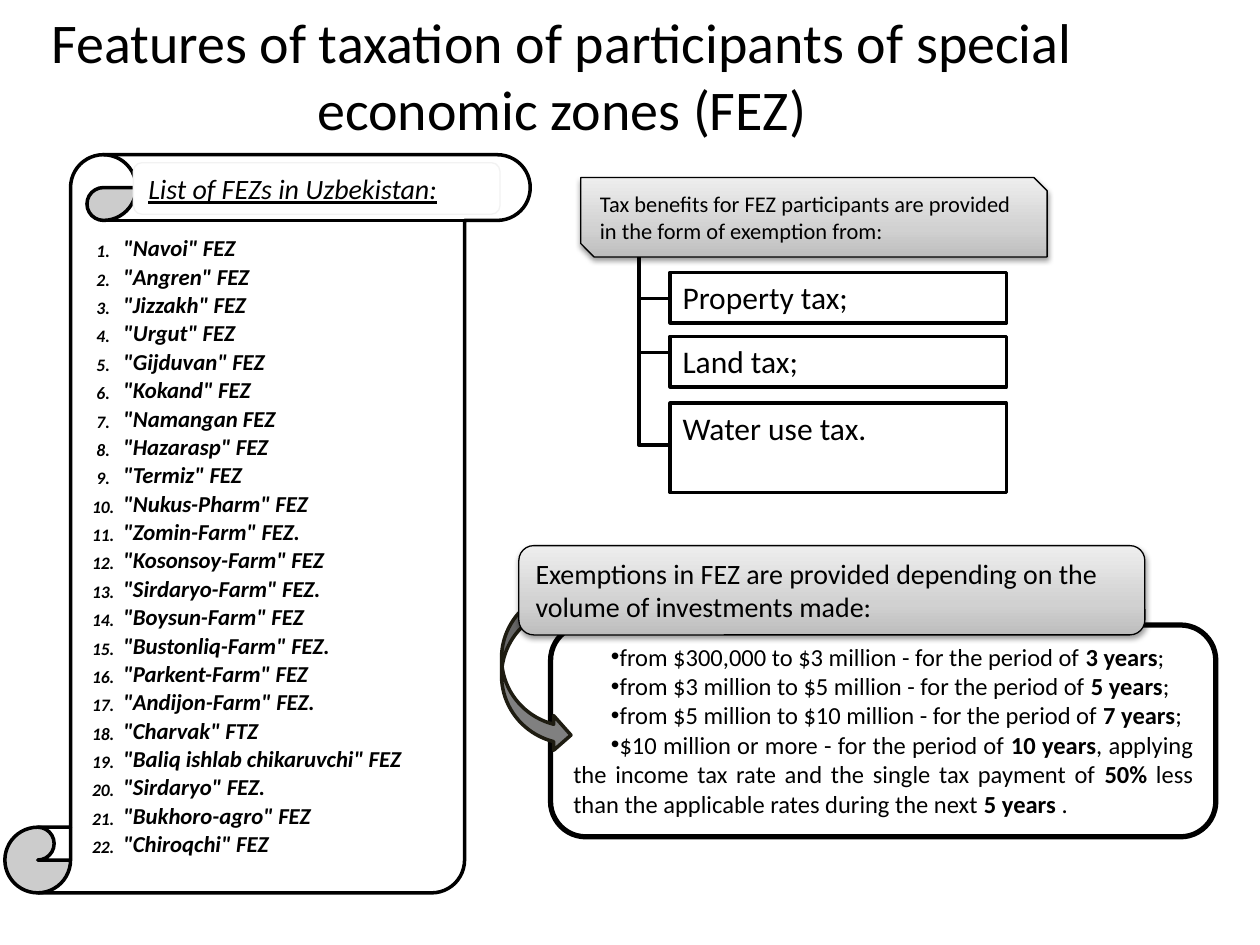
from lxml.etree import SubElement
from pptx import Presentation
from pptx.dml.color import RGBColor as Rgb
from pptx.enum.shapes import MSO_SHAPE as Form
from pptx.enum.text import MSO_ANCHOR as Anchor, PP_ALIGN as Align
from pptx.oxml.ns import qn
from pptx.util import Cm, Pt

FONT = "Calibri"
HUES = {"ink": "000000", "paper": "FFFFFF", "edge": "F2F2F2", "arrow": "808080",
        "rim": "1E1C11", "dark": "BDBDBD", "mid": "D1D1D1", "light": "EEEEEE"}
ZONES = ['"Navoi" FEZ', '"Angren" FEZ', '"Jizzakh" FEZ', '"Urgut" FEZ',
         '"Gijduvan" FEZ', '"Kokand" FEZ', '"Namangan FEZ', '"Hazarasp" FEZ',
         '"Termiz" FEZ', '"Nukus-Pharm" FEZ', '"Zomin-Farm" FEZ.',
         '"Kosonsoy-Farm" FEZ', '"Sirdaryo-Farm" FEZ.', '"Boysun-Farm" FEZ',
         '"Bustonliq-Farm" FEZ.', '"Parkent-Farm" FEZ', '"Andijon-Farm" FEZ.',
         '"Charvak" FTZ', '"Baliq ishlab chikaruvchi" FEZ', '"Sirdaryo" FEZ.',
         '"Bukhoro-agro" FEZ', '"Chiroqchi" FEZ']
TAXES = [("Property tax;", 1.91, 1.02, 2.44), ("Land tax;", 3.2, 1.02, 3.53),
         ("Water use tax.", 4.55, 1.8, 5.39)]
TERMS = [
    ["from $300,000 to $3 million - for the period of ", "3 years", ";"],
    ["from $3 million to $5 million - for the period of ", "5 years", ";"],
    ["from $5 million to $10 million - for the period of ", "7 years", ";"],
    ["$10 million or more - for the period of ", "10 years",
     ", applying the income tax rate and the single tax payment of ", "50%",
     " less than the applicable rates during the next ", "5 years", " ."],
]


def hue(name):
    return Rgb.from_string(HUES[name])


def style(frame, size, align=Align.LEFT, bold=False, slant=False, under=False):
    for para in frame.paragraphs:
        para.alignment = align
        for run in para.runs:
            font = run.font
            font.name, font.size = FONT, Pt(size)
            font.bold, font.italic, font.underline = bold, slant, under
            font.color.rgb = hue("ink")


def block(slide, form, x, y, w, h, line=2, fill="paper", edge="ink"):
    shape = slide.shapes.add_shape(form, Cm(x), Cm(y), Cm(w), Cm(h))
    shape.shadow.inherit = False
    shape.fill.solid()
    shape.fill.fore_color.rgb = hue(fill)
    shape.line.color.rgb = hue(edge)
    shape.line.width = Pt(line)
    shape.text_frame.word_wrap = True
    shape.text_frame.vertical_anchor = Anchor.TOP
    return shape


def banner(slide, form, x, y, w, h, text, size):
    shape = block(slide, form, x, y, w, h, 0.75)
    shape.fill.gradient()
    shape.fill.gradient_angle = 90
    props = shape.element.spPr
    stops = props.find(".//" + qn("a:gsLst"))
    stops.clear()
    for pos, name in ((0, "dark"), (35, "mid"), (100, "light")):
        stop = SubElement(stops, qn("a:gs"), pos=str(pos * 1000))
        SubElement(stop, qn("a:srgbClr"), val=HUES[name])
    shade = SubElement(props.find(qn("a:effectLst")), qn("a:outerShdw"),
                       blurRad="40000", dist="20000", dir="5400000", rotWithShape="0")
    tone = SubElement(shade, qn("a:srgbClr"), val=HUES["ink"])
    SubElement(tone, qn("a:alpha"), val="38000")
    shape.text_frame.text = text
    style(shape.text_frame, size)


def title(slide, x, y, w, h):
    frame = slide.shapes.add_textbox(Cm(x), Cm(y), Cm(w), Cm(h)).text_frame
    frame.word_wrap = True
    frame.vertical_anchor = Anchor.MIDDLE
    frame.text = "Features of taxation of participants of special economic zones (FEZ)"
    style(frame, 32, Align.CENTER)


def scroll(slide, x, y, w, h):
    block(slide, Form.VERTICAL_SCROLL, x, y, w, h)
    row = 0.56
    table = slide.shapes.add_table(len(ZONES), 2, Cm(x + 1.6), Cm(y + 1.6),
                                   Cm(7.21), Cm(row * len(ZONES))).table
    table.first_row = table.horz_banding = False
    table.columns[0].width, table.columns[1].width = Cm(0.76), Cm(6.45)
    kinds = [(10, Align.CENTER, Anchor.BOTTOM), (13, Align.JUSTIFY, Anchor.MIDDLE)]
    for num, zone in enumerate(ZONES):
        table.rows[num].height = Cm(row)
        for col, text in enumerate((f"{num + 1}.", zone)):
            size, align, anchor = kinds[col]
            cell = table.cell(num, col)
            cell.fill.solid()
            cell.fill.fore_color.rgb = hue("paper")
            cell.margin_left = cell.margin_right = cell.margin_top = Cm(0.02)
            cell.margin_bottom = 0
            cell.vertical_anchor = anchor
            cell.text_frame.text = text
            style(cell.text_frame, size, align, bold=True, slant=True)
    head = block(slide, Form.ROUNDED_RECTANGLE, x + 2.59, y + 0.16, 7.39, 1.04,
                 0.75, edge="edge")
    head.text_frame.text = "List of FEZs in Uzbekistan:"
    style(head.text_frame, 16, Align.JUSTIFY, slant=True, under=True)


def benefits(slide, x, y, w, h):
    stem, left, drop = x + 1.17, x + 1.8, 2.41
    for text, top, high, end in TAXES:
        path = slide.shapes.build_freeform(Cm(stem), Cm(y + end - drop))
        path.add_line_segments([(Cm(stem), Cm(y + end)), (Cm(left), Cm(y + end))],
                               close=False)
        elbow = path.convert_to_shape()
        elbow.shadow.inherit = False
        elbow.fill.background()
        elbow.line.color.rgb = hue("ink")
        elbow.line.width = Pt(2)
    banner(slide, Form.SNIP_2_DIAG_RECTANGLE, x, y, w, h,
           "Tax benefits for FEZ participants are provided in the form of exemption from:",
           12.8)
    for text, top, high, end in TAXES:
        box = block(slide, Form.RECTANGLE, left, y + top, 6.78, high)
        box.text_frame.text = text
        style(box.text_frame, 18)


def periods(slide, x, y, w, h):
    box = block(slide, Form.ROUNDED_RECTANGLE, x + 0.64, y + 1.6, 13.41, 4.27, 3)
    frame = box.text_frame
    for num, term in enumerate(TERMS):
        para = frame.add_paragraph() if num else frame.paragraphs[0]
        for part in term:
            para.add_run().text = part
    style(frame, 14, Align.JUSTIFY)
    for para in frame.paragraphs:
        for run in para.runs[1::2]:
            run.font.bold = True
        props = para._p.get_or_add_pPr()
        props.set("marL", "0")
        props.set("indent", str(Cm(0.76)))
        SubElement(props, qn("a:buFont"), typeface="Arial")
        SubElement(props, qn("a:buChar"), char="•")
    arrow = block(slide, Form.CURVED_UP_ARROW, x - 1.29, y + 1.83, 3.28, 1.4,
                  2, "arrow", "rim")
    arrow.rotation = 90
    banner(slide, Form.ROUNDED_RECTANGLE, x, y, w, h,
           "Exemptions in FEZ are provided depending on the volume of investments made:",
           16)


def main():
    deck = Presentation()
    deck.slide_width, deck.slide_height = Cm(25.4), Cm(19.05)
    slide = deck.slides.add_slide(deck.slide_layouts[6])
    title(slide, -0.1, -0.08, 22.86, 3.18)
    scroll(slide, 0.1, 3.12, 10.59, 14.88)
    benefits(slide, 11.71, 3.58, 9.4, 1.6)
    periods(slide, 10.46, 11, 12.62, 1.8)
    deck.save("out.pptx")


if __name__ == "__main__":
    main()
